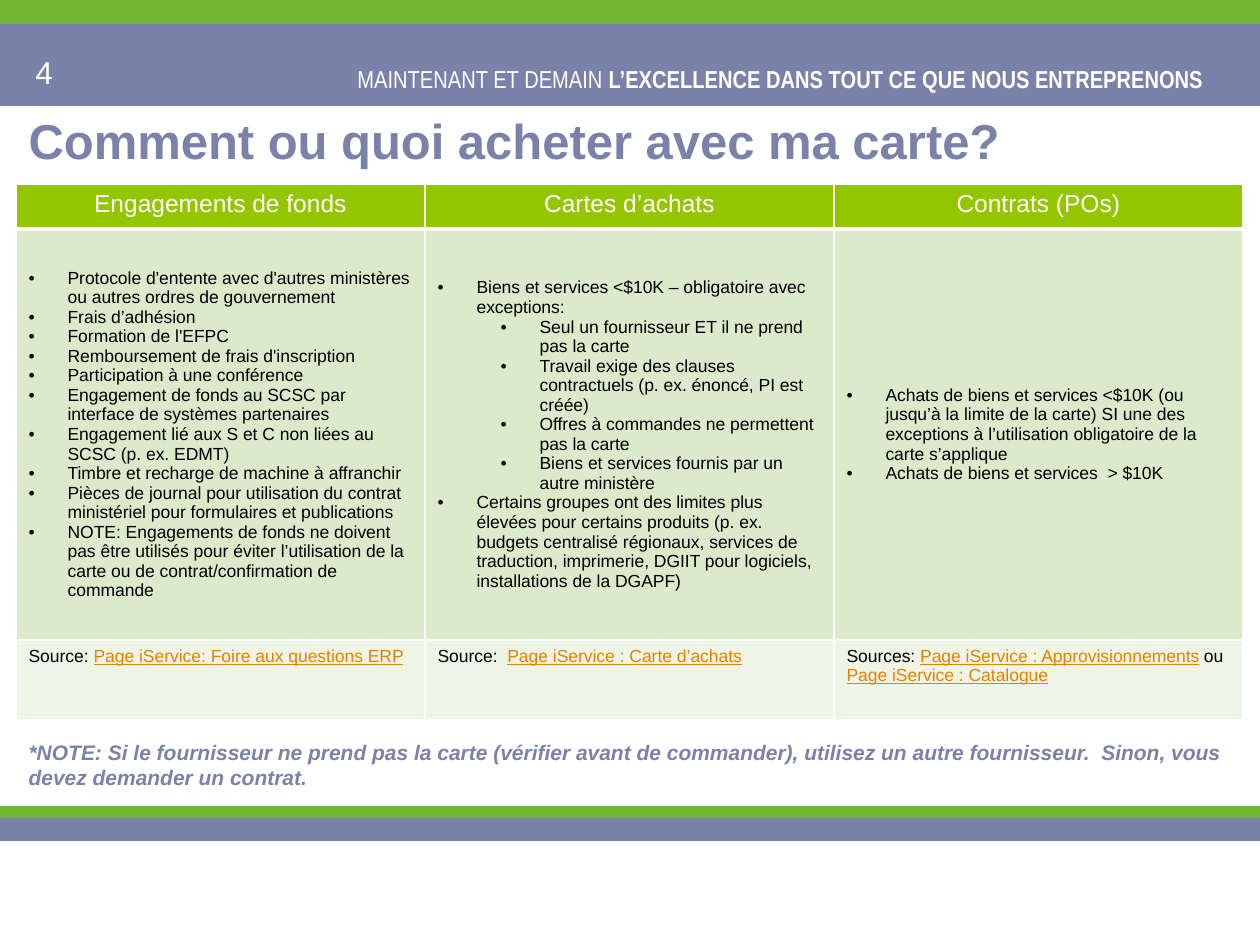
from lxml import etree
from pptx import Presentation
from pptx.dml.color import RGBColor
from pptx.enum import shapes, text
from pptx.oxml.ns import qn
from pptx.util import Emu, Pt

PX = 914400 / 126

WHITE = RGBColor(0xFF, 0xFF, 0xFF)
BLACK = RGBColor(0, 0, 0)
SLATE = RGBColor(0x7A, 0x82, 0xAA)
GREEN = RGBColor(0x73, 0xB6, 0x32)
LIME = RGBColor(0x94, 0xC6, 0x00)
PALE = RGBColor(0xDC, 0xEA, 0xCC)
PALER = RGBColor(0xEE, 0xF5, 0xE7)
ORANGE = RGBColor(0xE6, 0x82, 0x00)

# Content
TITLE = "Comment ou quoi acheter avec ma carte?"
PAGE_NUMBER = "4"
SLOGAN = [("MAINTENANT ET DEMAIN ", {}),
          ("L’EXCELLENCE DANS TOUT CE QUE NOUS ENTREPRENONS", {"bold": True})]
NOTE = ("*NOTE: Si le fournisseur ne prend pas la carte (vérifier avant de commander), "
        "utilisez un autre fournisseur.  Sinon, vous devez demander un contrat.")
LINK = {"color": ORANGE, "underline": True}

# Each column: heading, (level, text) bullets, source runs
COLUMNS = [
    ("Engagements de fonds", [
        (0, "Protocole d'entente avec d'autres ministères ou autres ordres de gouvernement"),
        (0, "Frais d’adhésion"),
        (0, "Formation de l'EFPC"),
        (0, "Remboursement de frais d'inscription"),
        (0, "Participation à une conférence"),
        (0, "Engagement de fonds au SCSC par interface de systèmes partenaires"),
        (0, "Engagement lié aux S et C non liées au SCSC (p. ex. EDMT)"),
        (0, "Timbre et recharge de machine à affranchir"),
        (0, "Pièces de journal pour utilisation du contrat ministériel pour formulaires "
            "et publications"),
        (0, "NOTE: Engagements de fonds ne doivent pas être utilisés pour éviter "
            "l’utilisation de la carte ou de contrat/confirmation de commande"),
    ], [("Source: ", {}), ("Page iService: Foire aux questions ERP", LINK)]),
    ("Cartes d’achats", [
        (0, "Biens et services <$10K – obligatoire avec exceptions:"),
        (1, "Seul un fournisseur ET il ne prend pas la carte"),
        (1, "Travail exige des clauses contractuels (p. ex. énoncé, PI est créée)"),
        (1, "Offres à commandes ne permettent pas la carte"),
        (1, "Biens et services fournis par un autre ministère"),
        (0, "Certains groupes ont des limites plus élevées pour certains produits (p. ex. "
            "budgets centralisé régionaux, services de traduction, imprimerie, DGIIT pour "
            "logiciels, installations de la DGAPF)"),
    ], [("Source:  ", {}), ("Page iService : Carte d’achats", LINK)]),
    ("Contrats (POs)", [
        (0, "Achats de biens et services <$10K (ou jusqu’à la limite de la carte) SI une des "
            "exceptions à l’utilisation obligatoire de la carte s’applique"),
        (0, "Achats de biens et services  > $10K"),
    ], [("Sources: ", {}), ("Page iService : Approvisionnements", LINK),
        (" ou ", {}), ("Page iService : Catalogue", LINK)]),
]

# Geometry in px: left, top, width, height
BARS = [((0, 24, 1260, 82), SLATE), ((0, 0, 1260, 24), GREEN),
        ((0, 818, 1260, 23), SLATE), ((0, 806, 1260, 12), GREEN)]
SLOGAN_BOX = (304, 58, 912, 43)
NUMBER_BOX = (23, 47, 294, 50)
TITLE_BOX = (16, 95, 1212, 89)
NOTE_BOX = (16, 733, 1228, 62)
TABLE_LEFT, TABLE_TOP, COLUMN_WIDTH = 16, 184, 409
ROW_HEIGHTS = [45, 411, 80]
INDENT, LEVEL_STEP = 39, 63


def px(value):
    return Emu(round(value * PX))


def place(shape, box):
    shape.left, shape.top, shape.width, shape.height = map(px, box)


def write(paragraph, content, size=10, color=BLACK, font="Arial", bold=False, italic=False,
          align=text.PP_ALIGN.LEFT, level=None):
    """Fill a paragraph with a string or with (string, overrides) runs."""
    properties = paragraph._p.get_or_add_pPr()
    margin = 0 if level is None else INDENT + level * LEVEL_STEP
    properties.set("marL", str(px(margin)))
    properties.set("indent", str(px(0 if level is None else -INDENT)))
    if level is None:
        etree.SubElement(properties, qn("a:buNone"))
    else:
        etree.SubElement(properties, qn("a:buFont"), typeface="Arial")
        etree.SubElement(properties, qn("a:buChar"), char="•")
        paragraph.level = level
    paragraph.alignment = align
    paragraph.space_before = Pt(0)
    for string, changes in [(content, {})] if isinstance(content, str) else content:
        run = paragraph.add_run()
        run.text = string
        run.font.name, run.font.size = font, Pt(size)
        run.font.bold = changes.get("bold", bold)
        run.font.italic = italic
        run.font.underline = changes.get("underline", False)
        run.font.color.rgb = changes.get("color", color)


def add_text(slide, box, content, **style):
    shape = slide.shapes.add_textbox(*map(px, box))
    shape.text_frame.word_wrap = True
    write(shape.text_frame.paragraphs[0], content, **style)


def fill_placeholder(shape, box, content, anchor, **style):
    place(shape, box)
    frame = shape.text_frame
    frame.word_wrap, frame.auto_size = True, text.MSO_AUTO_SIZE.NONE
    frame.vertical_anchor = anchor
    write(frame.paragraphs[0], content, color=SLATE, bold=True, **style)


def style_cell(cell, fill, bottom=1, top=1):
    properties = cell._tc.get_or_add_tcPr()
    for side, width in (("L", 1), ("R", 1), ("T", top), ("B", bottom)):
        line = etree.SubElement(properties, qn(f"a:ln{side}"), w=str(Pt(width)))
        solid = etree.SubElement(line, qn("a:solidFill"))
        etree.SubElement(solid, qn("a:srgbClr"), val=str(WHITE))
    cell.fill.solid()
    cell.fill.fore_color.rgb = fill


def add_purchase_table(slide):
    rows, columns = len(ROW_HEIGHTS), len(COLUMNS)
    box = (TABLE_LEFT, TABLE_TOP, COLUMN_WIDTH * columns, sum(ROW_HEIGHTS))
    table = slide.shapes.add_table(rows, columns, *map(px, box)).table
    for row, height in zip(table.rows, ROW_HEIGHTS):
        row.height = px(height)
    for index, (heading, bullets, source) in enumerate(COLUMNS):
        table.columns[index].width = px(COLUMN_WIDTH)
        head, body, foot = (table.cell(row, index) for row in range(rows))
        style_cell(head, LIME, bottom=3)
        style_cell(body, PALE, top=3)
        style_cell(foot, PALER)
        write(head.text_frame.paragraphs[0], heading, size=14, color=WHITE,
              align=text.PP_ALIGN.CENTER)
        body.vertical_anchor = text.MSO_ANCHOR.MIDDLE
        frame = body.text_frame
        for number, (level, bullet) in enumerate(bullets):
            paragraph = frame.add_paragraph() if number else frame.paragraphs[0]
            write(paragraph, bullet, level=level)
        write(foot.text_frame.paragraphs[0], source)


def main():
    presentation = Presentation()
    presentation.slide_width, presentation.slide_height = px(1260), px(945)
    slide = presentation.slides.add_slide(presentation.slide_layouts[1])

    # Header and footer bands
    for box, color in BARS:
        bar = slide.shapes.add_shape(shapes.MSO_SHAPE.RECTANGLE, *map(px, box))
        bar.shadow.inherit = False
        bar.fill.solid()
        bar.fill.fore_color.rgb = color
        bar.line.fill.background()
    add_text(slide, SLOGAN_BOX, SLOGAN, size=14, color=WHITE, font="Arial Narrow",
             align=text.PP_ALIGN.RIGHT)
    add_text(slide, NUMBER_BOX, PAGE_NUMBER, size=18, color=WHITE)

    # Title, table and closing note
    fill_placeholder(slide.shapes.title, TITLE_BOX, TITLE, text.MSO_ANCHOR.MIDDLE, size=28)
    fill_placeholder(slide.placeholders[1], NOTE_BOX, NOTE, text.MSO_ANCHOR.TOP, size=12,
                     italic=True)
    add_purchase_table(slide)

    presentation.save("out.pptx")


if __name__ == "__main__":
    main()
